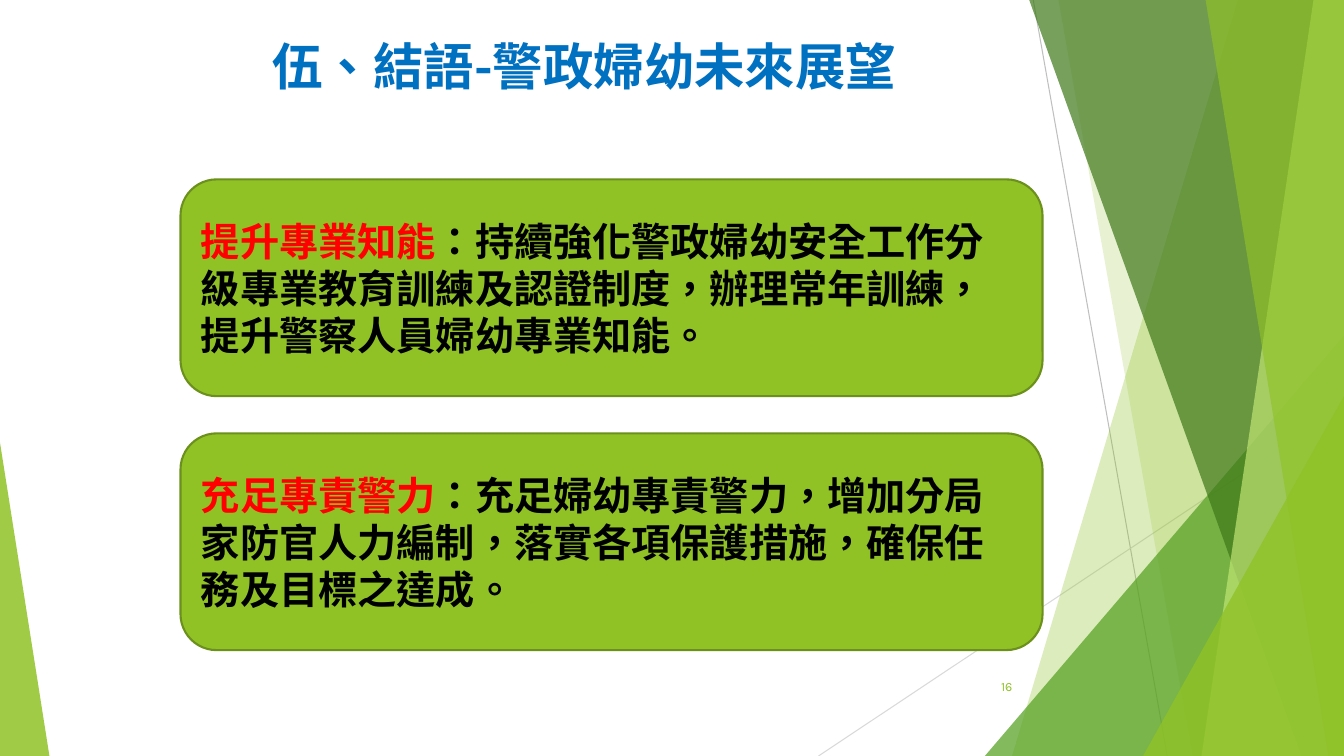
from dataclasses import dataclass

from lxml.etree import SubElement
from pptx import Presentation
from pptx.dml.color import RGBColor
from pptx.enum.lang import MSO_LANGUAGE_ID
from pptx.enum.shapes import MSO_CONNECTOR, MSO_SHAPE
from pptx.enum.text import MSO_ANCHOR, MSO_AUTO_SIZE, PP_ALIGN
from pptx.oxml.ns import qn
from pptx.shapes.autoshape import Shape
from pptx.slide import Slide
from pptx.text.text import TextFrame
from pptx.util import Inches, Pt

SLIDE_WIDTH, SLIDE_HEIGHT = Inches(13.33), Inches(7.5)
CHINESE_FONT, NUMBER_FONT = "Noto Sans CJK SC", "Karla"
GREEN, BORDER_GREEN = "90C226", "6B901C"
RED, BLACK, BLUE = "FF0000", "000000", "0070C0"


@dataclass(frozen=True)
class Ray:
    start: tuple[float, float]
    end: tuple[float, float]
    color: str


@dataclass(frozen=True)
class Band:
    """A full-height band from a slanted left side to the slide's right edge."""
    top_left: float
    bottom_left: float
    color: str
    opacity: int


@dataclass(frozen=True)
class Wedge:
    """A right triangle standing on the slide's bottom edge."""
    left: float
    top: float
    width: float
    apex: float
    color: str
    opacity: int


@dataclass(frozen=True)
class Card:
    heading: str
    body: str


# Positions and sizes are percentages of the slide's width and height.
RAYS = [
    Ray((76.88, 0), (86.85, 100), "BFBFBF"),
    Ray((100, 53.73), (60.9, 100), "D9D9D9"),
]
FACETS = [
    Band(92.1, 75.3, GREEN, 30),
    Band(78.75, 88.73, GREEN, 20),
    Wedge(73.28, 44.4, 26.72, 1, "54A021", 72),
    Band(76.58, 96.83, "3F7819", 70),
    Band(97.73, 89.4, "C0E474", 70),
    Band(89.7, 98.85, GREEN, 65),
    Wedge(85.05, 52.4, 14.95, 1, GREEN, 80),
    Wedge(0, 58.53, 3.68, 0, GREEN, 85),
]
CARDS = [
    Card("提升專業知能", "：持續強化警政婦幼安全工作分級專業教育訓練及認證制度，辦理常年訓練，提升警察人員婦幼專業知能。"),
    Card("充足專責警力", "：充足婦幼專責警力，增加分局家防官人力編制，落實各項保護措施，確保任務及目標之達成。"),
]
CARD_LEFT, CARD_TOP, CARD_WIDTH, CARD_HEIGHT = 13.43, 23.73, 64.14, 28.67
CARD_PITCH = 33.6


def across(percent: float) -> int:
    return round(SLIDE_WIDTH * percent / 100)


def down(percent: float) -> int:
    return round(SLIDE_HEIGHT * percent / 100)


def box(left: float, top: float, width: float, height: float) -> tuple[int, int, int, int]:
    return across(left), down(top), across(width), down(height)


def color_of(hex_color: str) -> RGBColor:
    return RGBColor.from_string(hex_color)


def paint_facet(shape: Shape, color: str, opacity: int) -> None:
    shape.shadow.inherit = False
    shape.line.fill.background()
    shape.fill.solid()
    shape.fill.fore_color.rgb = color_of(color)
    color_element = shape.fill._xPr.find(qn("a:solidFill"))[0]
    SubElement(color_element, qn("a:alpha"), val=str(opacity * 1000))


def draw_ray(slide: Slide, ray: Ray) -> None:
    (start_x, start_y), (end_x, end_y) = ray.start, ray.end
    connector = slide.shapes.add_connector(
        MSO_CONNECTOR.STRAIGHT, across(start_x), down(start_y), across(end_x), down(end_y)
    )
    connector.line.color.rgb = color_of(ray.color)
    connector.line.width = Pt(0.75)
    SubElement(connector._element.spPr, qn("a:effectLst"))


def draw_facet(slide: Slide, facet: Band | Wedge) -> None:
    if isinstance(facet, Band):
        builder = slide.shapes.build_freeform(across(facet.top_left), 0)
        corners = [(100, 0), (100, 100), (facet.bottom_left, 100)]
        builder.add_line_segments([(across(x), down(y)) for x, y in corners], close=True)
        shape = builder.convert_to_shape()
    else:
        shape = slide.shapes.add_shape(
            MSO_SHAPE.ISOSCELES_TRIANGLE,
            *box(facet.left, facet.top, facet.width, 100 - facet.top),
        )
        shape.adjustments[0] = facet.apex
    paint_facet(shape, facet.color, facet.opacity)


def write_line(
    frame: TextFrame, runs: list[tuple[str, str]], size: int,
    alignment: PP_ALIGN, font_name: str = CHINESE_FONT, bold: bool = True,
) -> None:
    """Fill the frame with one paragraph of (text, colour) runs."""
    frame.word_wrap = True
    paragraph = frame.paragraphs[0]
    paragraph.alignment = alignment
    paragraph.font.size = Pt(size)
    paragraph.font.bold = bold
    paragraph.font.name = font_name
    SubElement(paragraph._p.pPr.find(qn("a:defRPr")), qn("a:ea"), typeface=font_name)
    for text, color in runs:
        run = paragraph.add_run()
        run.text = text
        run.font.color.rgb = color_of(color)
        run.font.language_id = MSO_LANGUAGE_ID.TRADITIONAL_CHINESE


def draw_card(slide: Slide, card: Card, row: int) -> None:
    shape = slide.shapes.add_shape(
        MSO_SHAPE.ROUNDED_RECTANGLE,
        *box(CARD_LEFT, CARD_TOP + row * CARD_PITCH, CARD_WIDTH, CARD_HEIGHT),
    )
    shape.shadow.inherit = False
    shape.fill.solid()
    shape.fill.fore_color.rgb = color_of(GREEN)
    shape.line.color.rgb = color_of(BORDER_GREEN)
    shape.line.width = Pt(1.5)
    shape.text_frame.vertical_anchor = MSO_ANCHOR.MIDDLE
    write_line(shape.text_frame, [(card.heading, RED), (card.body, BLACK)], 28, PP_ALIGN.LEFT)


def main() -> None:
    presentation = Presentation()
    presentation.slide_width, presentation.slide_height = SLIDE_WIDTH, SLIDE_HEIGHT
    slide = presentation.slides.add_slide(presentation.slide_layouts[6])

    for ray in RAYS:
        draw_ray(slide, ray)
    for facet in FACETS:
        draw_facet(slide, facet)

    page_number = slide.shapes.add_textbox(*box(70.44, 88.13, 5.63, 5.33)).text_frame
    page_number.vertical_anchor = MSO_ANCHOR.MIDDLE
    write_line(page_number, [("16", GREEN)], 9, PP_ALIGN.RIGHT, NUMBER_FONT, bold=False)

    title = slide.shapes.add_textbox(*box(9.38, 4, 68.19, 9.47)).text_frame
    title.auto_size = MSO_AUTO_SIZE.SHAPE_TO_FIT_TEXT
    write_line(title, [("伍、結語-警政婦幼未來展望", BLUE)], 36, PP_ALIGN.CENTER)

    for row, card in enumerate(CARDS):
        draw_card(slide, card, row)

    presentation.save("out.pptx")


if __name__ == "__main__":
    main()
